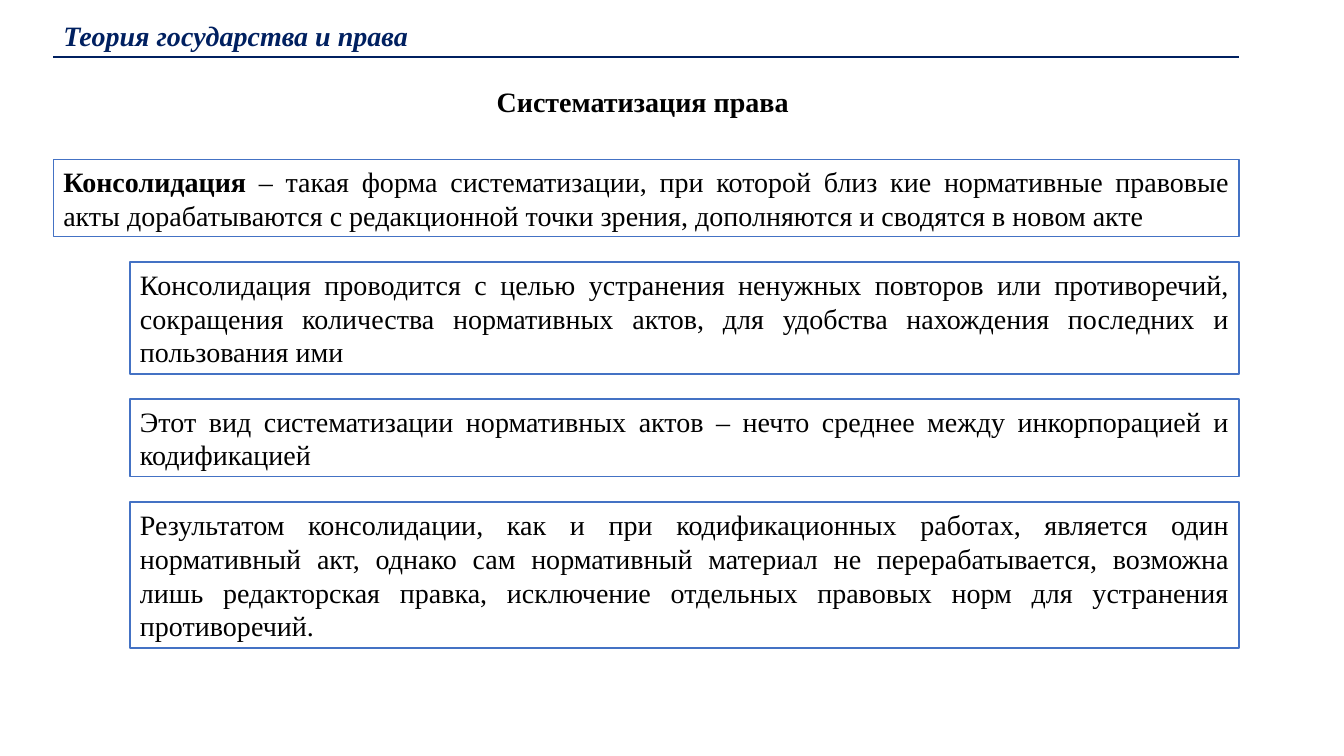
from lxml.etree import SubElement
from pptx import Presentation
from pptx.dml.color import RGBColor
from pptx.enum.shapes import MSO_CONNECTOR, MSO_SHAPE
from pptx.enum.text import MSO_AUTO_SIZE, PP_ALIGN as Align
from pptx.oxml.ns import qn
from pptx.util import Inches, Pt

NAVY, BLUE, BLACK, WHITE = "002060", "4472C4", "000000", "FFFFFF"
LEFT, INDENT, RIGHT = 0.53, 1.29, 12.29
GAP = 0.25


def color(value):
    return RGBColor.from_string(value)


def write(box, text, lead="", align=Align.LEFT, fill=BLACK, bold=False, italic=False, wrap=True):
    """Fill a box with one paragraph, opened by an optional bold lead."""
    frame = box.text_frame
    frame.word_wrap = wrap
    frame.auto_size = MSO_AUTO_SIZE.SHAPE_TO_FIT_TEXT
    para = frame.paragraphs[0]
    para.alignment = align
    for words, heavy in ((lead, True), (text, bold)):
        if words:
            span = para.add_run()
            span.text = words
            span.font.name = "Times New Roman"
            span.font.size = Pt(20)
            span.font.bold = heavy
            span.font.italic = italic
            span.font.color.rgb = color(fill)


deck = Presentation()
deck.slide_width, deck.slide_height = Inches(13.33), Inches(7.5)
page = deck.slides.add_slide(deck.slide_layouts[6])

course = page.shapes.add_textbox(Inches(LEFT), Inches(0.13), Inches(3.71), Inches(0.44))
write(course, "Теория государства и права", fill=NAVY, bold=True, italic=True, wrap=False)

rule = page.shapes.add_connector(
    MSO_CONNECTOR.STRAIGHT, Inches(LEFT), Inches(0.57), Inches(RIGHT), Inches(0.57))
rule.line.color.rgb = color(NAVY)
rule.line.width = Pt(1.5)
SubElement(rule._element.spPr, qn("a:effectLst"))

title = page.shapes.add_textbox(Inches(LEFT), Inches(0.79), Inches(RIGHT - LEFT), Inches(0.44))
write(title, "Систематизация права ", align=Align.CENTER, bold=True)

# left edge, height, bold lead, text
statements = [
    (LEFT, 0.77, "Консолидация",
     " – такая форма систематизации, при которой близ кие нормативные правовые акты "
     "дорабатываются с редакционной точки зрения, дополняются и сводятся в новом акте"),
    (INDENT, 1.11, "",
     "Консолидация проводится с целью устранения ненужных повторов или противоречий, "
     "сокращения количества нормативных актов, для удобства нахождения последних и "
     "пользования ими"),
    (INDENT, 0.77, "",
     "Этот вид систематизации нормативных актов – нечто среднее между инкорпорацией и "
     "кодификацией"),
    (INDENT, 1.45, "",
     "Результатом консолидации, как и при кодификационных работах, является один "
     "нормативный акт, однако сам нормативный материал не перерабатывается, возможна "
     "лишь редакторская правка, исключение отдельных правовых норм для устранения "
     "противоречий."),
]
top = 1.58
for left, height, lead, text in statements:
    box = page.shapes.add_shape(
        MSO_SHAPE.RECTANGLE, Inches(left), Inches(top), Inches(RIGHT - left), Inches(height))
    box.shadow.inherit = False
    box.fill.solid()
    box.fill.fore_color.rgb = color(WHITE)
    box.line.color.rgb = color(BLUE)
    box.line.width = Pt(1)
    write(box, text, lead=lead, align=Align.JUSTIFY)
    top += height + GAP

deck.save("out.pptx")
